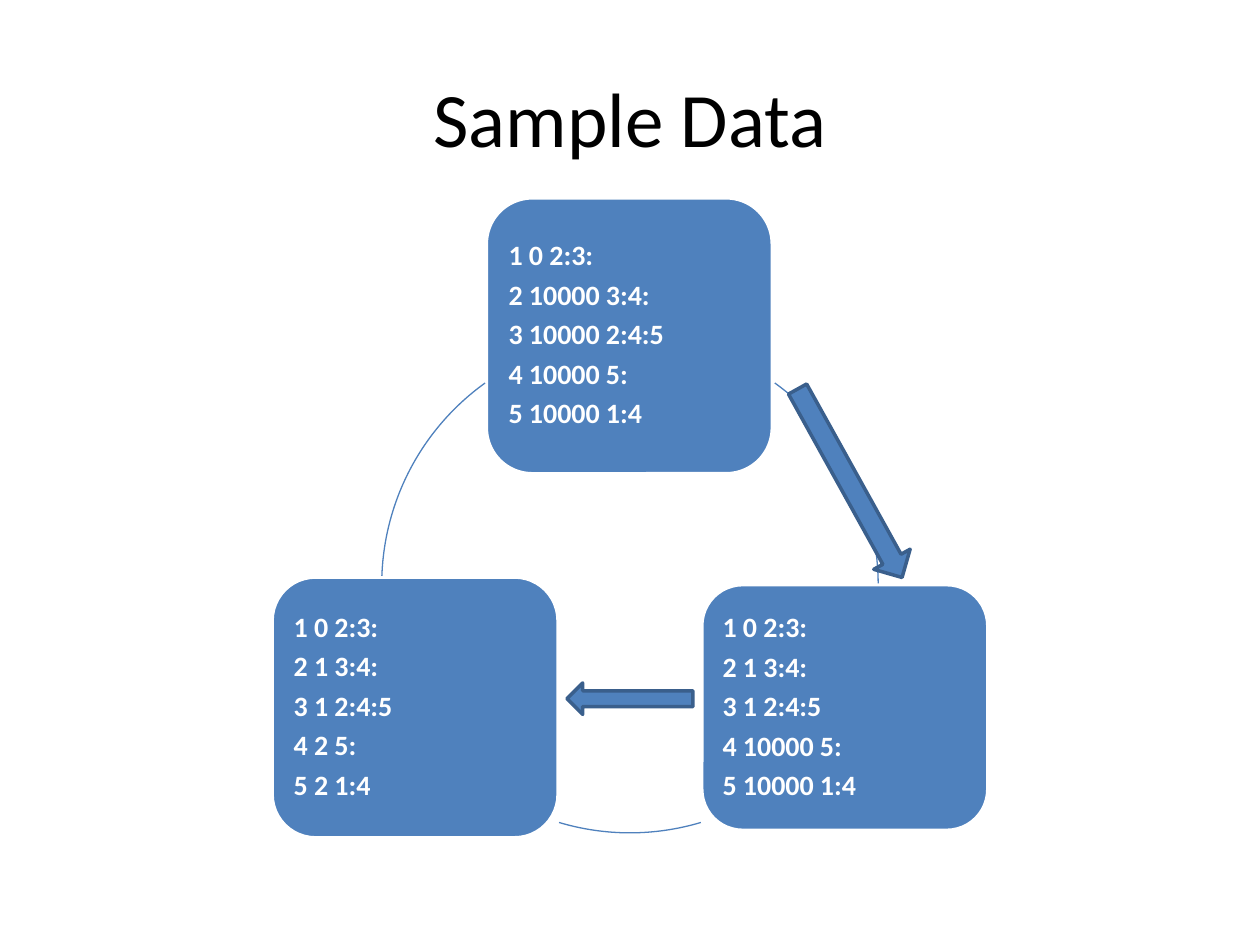
from pptx import Presentation
from pptx.dml.color import RGBColor
from pptx.enum.shapes import MSO_SHAPE
from pptx.enum.text import MSO_ANCHOR, PP_ALIGN
from pptx.util import Inches, Pt

COLORS = {"blue": "4F81BD", "edge": "3A5F8C", "white": "FFFFFF", "black": "000000"}


def write(tf, text, size, color, bold=False, align=PP_ALIGN.LEFT, spacing=None, after=0, inset=None):
    tf.word_wrap = True
    tf.vertical_anchor = MSO_ANCHOR.MIDDLE
    if inset is not None:
        tf.margin_left = tf.margin_right = tf.margin_top = tf.margin_bottom = Inches(inset)
    for i, line in enumerate(text.split("\n")):
        p = tf.add_paragraph() if i else tf.paragraphs[0]
        p.alignment = align
        p.line_spacing = spacing
        p.space_after = Pt(after)
        r = p.add_run()
        r.text = line
        r.font.name = "Calibri"
        r.font.size = Pt(size)
        r.font.bold = bold
        r.font.color.rgb = RGBColor.from_string(COLORS[color])


class CycleSlide:
    """Draws the parts of a cycle diagram on one slide."""

    def __init__(self, prs):
        self.s = prs.slides.add_slide(prs.slide_layouts[6])

    def title(self, text, x, y, w, h):
        sp = self.s.shapes.add_textbox(Inches(x), Inches(y), Inches(w), Inches(h))
        write(sp.text_frame, text, 44, "black", align=PP_ALIGN.CENTER)

    def shape(self, kind, x, y, w, h, fill="blue", line="edge", width=2):
        sp = self.s.shapes.add_shape(kind, Inches(x), Inches(y), Inches(w), Inches(h))
        sp.shadow.inherit = False
        if fill:
            sp.fill.solid()
            sp.fill.fore_color.rgb = RGBColor.from_string(COLORS[fill])
        else:
            sp.fill.background()
        sp.line.color.rgb = RGBColor.from_string(COLORS[line])
        sp.line.width = Pt(width)
        return sp

    def box(self, text, x, y, h):
        sp = self.shape(MSO_SHAPE.ROUNDED_RECTANGLE, x, y, 2.27, h, line="white")
        write(sp.text_frame, text, 16, "white", bold=True, spacing=0.9, after=5.3, inset=0.07)

    def arc(self, start, end, cx=5, cy=4.64, radius=1.97):
        sp = self.shape(MSO_SHAPE.ARC, cx - radius, cy - radius, 2 * radius, 2 * radius,
                        fill=None, line="blue", width=0.75)
        for i, degrees in enumerate((start, end)):
            sp.adjustments[i] = degrees * 60000 / 100000

    def arrow(self, kind, x, y, w, h, rotation=0):
        self.shape(kind, x, y, w, h).rotation = rotation


def main():
    prs = Presentation()
    prs.slide_width, prs.slide_height = Inches(10), Inches(7.5)
    slide = CycleSlide(prs)
    slide.title("Sample Data", 0.5, 0.3, 9, 1.25)
    for text, x, y, h in (
        ("1 0 2:3:\n2 10000 3:4:\n3 10000 2:4:5\n4 10000 5:\n5 10000 1:4", 3.86, 1.57, 2.19),
        ("1 0 2:3:\n2 1 3:4:\n3 1 2:4:5\n4 10000 5:\n5 10000 1:4", 5.57, 4.64, 1.95),
        ("1 0 2:3:\n2 1 3:4:\n3 1 2:4:5\n4 2 5:\n5 2 1:4", 2.16, 4.58, 2.07),
    ):
        slide.box(text, x, y, h)
    for start, end in ((305.7, 359.7), (73.4, 106.6), (182, 234.3)):
        slide.arc(start, end)
    slide.arrow(MSO_SHAPE.DOWN_ARROW, 6.58, 2.98, 0.33, 1.71, rotation=331)
    slide.arrow(MSO_SHAPE.LEFT_ARROW, 4.5, 5.42, 1, 0.25)
    prs.save("out.pptx")


if __name__ == "__main__":
    main()
